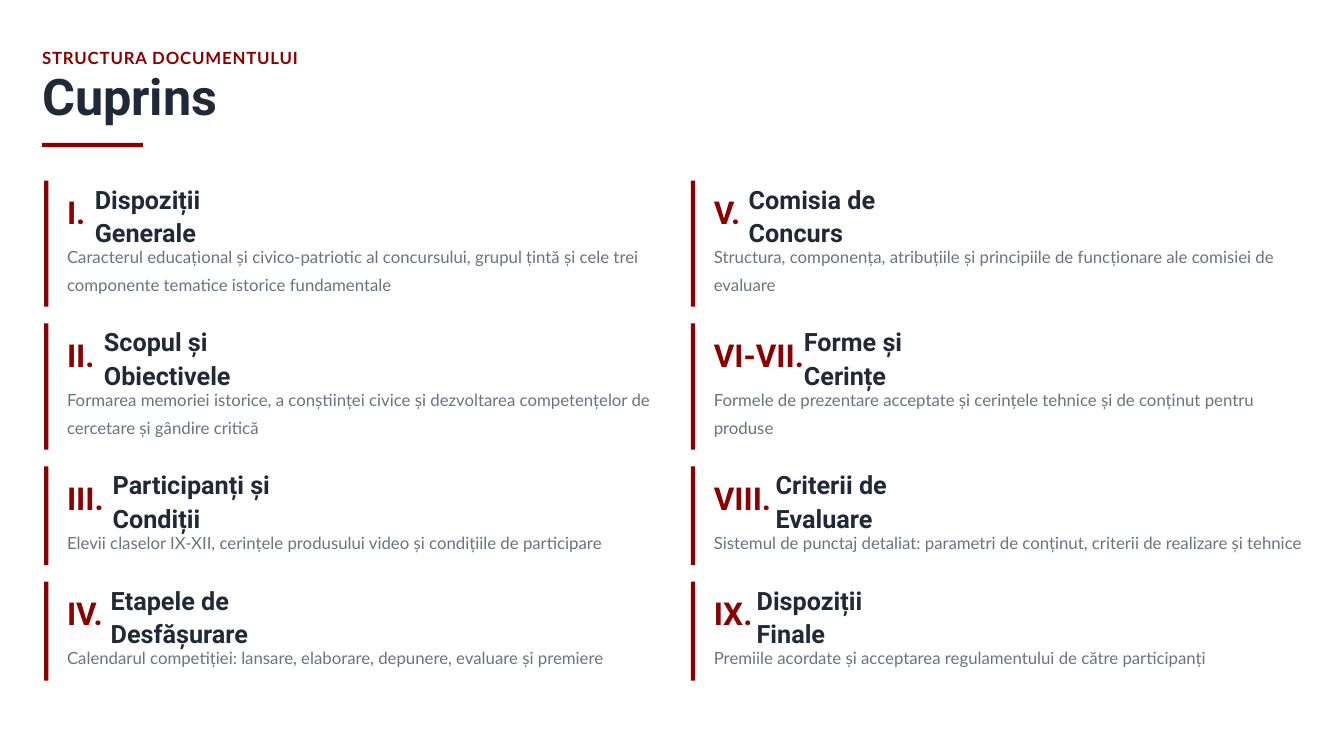
import pptx
import pptx.util
import pptx.dml.color
import pptx.enum.shapes
import pptx.enum.text

Cm = pptx.util.Cm
RED = pptx.dml.color.RGBColor(0x8B, 0x00, 0x00)
DARK = pptx.dml.color.RGBColor(0x1F, 0x29, 0x37)
GRAY = pptx.dml.color.RGBColor(0x6B, 0x72, 0x80)

COLUMN_LEFT = 1.11
COLUMN_STEP = 16.3
ROW_TOP = 4.55
ROW_HEIGHTS = [3.18, 3.18, 2.49, 2.49]
ROW_GAP = 0.42

COLUMNS = [
    [
        ("I.", 0.79, "Dispoziții Generale", 5.03,
         "Caracterul educațional și civico-patriotic al concursului, grupul țintă "
         "și cele trei componente tematice istorice fundamentale"),
        ("II.", 1.02, "Scopul și Obiectivele", 5.51,
         "Formarea memoriei istorice, a conștiinței civice și dezvoltarea "
         "competențelor de cercetare și gândire critică"),
        ("III.", 1.24, "Participanți și Condiții", 5.99,
         "Elevii claselor IX-XII, cerințele produsului video și condițiile de participare"),
        ("IV.", 1.19, "Etapele de Desfășurare", 6.12,
         "Calendarul competiției: lansare, elaborare, depunere, evaluare și premiere"),
    ],
    [
        ("V.", 0.97, "Comisia de Concurs", 5.21,
         "Structura, componența, atribuțiile și principiile de funcționare ale "
         "comisiei de evaluare"),
        ("VI-VII.", 2.36, "Forme și Cerințe", 4.45,
         "Formele de prezentare acceptate și cerințele tehnice și de conținut pentru produse"),
        ("VIII.", 1.65, "Criterii de Evaluare", 5.18,
         "Sistemul de punctaj detaliat: parametri de conținut, criterii de realizare și tehnice"),
        ("IX.", 1.17, "Dispoziții Finale", 4.39,
         "Premiile acordate și acceptarea regulamentului de către participanți"),
    ],
]


def format_text(box, text, font_name, size, color, bold=True, spacing=1.0):
    frame = box.text_frame
    frame.text = text
    frame.word_wrap = True
    frame.auto_size = pptx.enum.text.MSO_AUTO_SIZE.NONE
    frame.vertical_anchor = pptx.enum.text.MSO_ANCHOR.MIDDLE
    frame.margin_left = frame.margin_right = frame.margin_top = frame.margin_bottom = 0
    para = frame.paragraphs[0]
    para.alignment = pptx.enum.text.PP_ALIGN.LEFT
    para.line_spacing = spacing
    span = para.runs[0]
    span.font.name = font_name
    span.font.size = pptx.util.Pt(size)
    span.font.bold = bold
    span.font.color.rgb = color
    return span


def add_text(page, left, top, width, height, *style, **options):
    box = page.shapes.add_textbox(Cm(left), Cm(top), Cm(width), Cm(height))
    return format_text(box, *style, **options)


def add_bar(page, left, top, width, height):
    bar = page.shapes.add_shape(
        pptx.enum.shapes.MSO_SHAPE.RECTANGLE, Cm(left), Cm(top), Cm(width), Cm(height))
    bar.shadow.inherit = False
    bar.fill.solid()
    bar.fill.fore_color.rgb = RED
    bar.line.fill.background()


def add_header(page, left, top, width):
    label = add_text(page, left, top, width, 0.64,
                     "STRUCTURA DOCUMENTULUI", "Lato", 12, RED, spacing=1.3)
    label.font._element.set("spc", "60")
    title = page.shapes.title
    title.left, title.top = Cm(left), Cm(top + 0.85)
    title.width, title.height = Cm(width), Cm(1.27)
    format_text(title, "Cuprins", "Roboto", 36, DARK, spacing=0.8)
    add_bar(page, left, top + 2.54, 2.54, 0.11)


def add_entry(page, left, top, height, entry):
    number, number_width, heading, heading_width, summary = entry
    text_left = left + 0.58
    add_bar(page, left, top, 0.11, height)
    add_text(page, text_left, top + 0.32, number_width, 0.95,
             number, "Roboto", 22.5, RED)
    add_text(page, text_left + number_width - 0.09, top + 0.42, heading_width, 0.85,
             heading, "Roboto", 18, DARK, spacing=1.1)
    add_text(page, text_left, top + 1.48, 15.03, height - 1.8,
             summary, "Lato", 12, GRAY, bold=False, spacing=1.4)


def add_contents(page, left, top):
    for column, entries in enumerate(COLUMNS):
        entry_top = top
        for height, entry in zip(ROW_HEIGHTS, entries):
            add_entry(page, left + column * COLUMN_STEP, entry_top, height, entry)
            entry_top += height + ROW_GAP


def main():
    deck = pptx.Presentation()
    deck.slide_width, deck.slide_height = Cm(33.87), Cm(19.05)
    page = deck.slides.add_slide(deck.slide_layouts[5])
    add_header(page, 1.06, 1.06, 32)
    add_contents(page, COLUMN_LEFT, ROW_TOP)
    deck.save("out.pptx")


if __name__ == "__main__":
    main()
